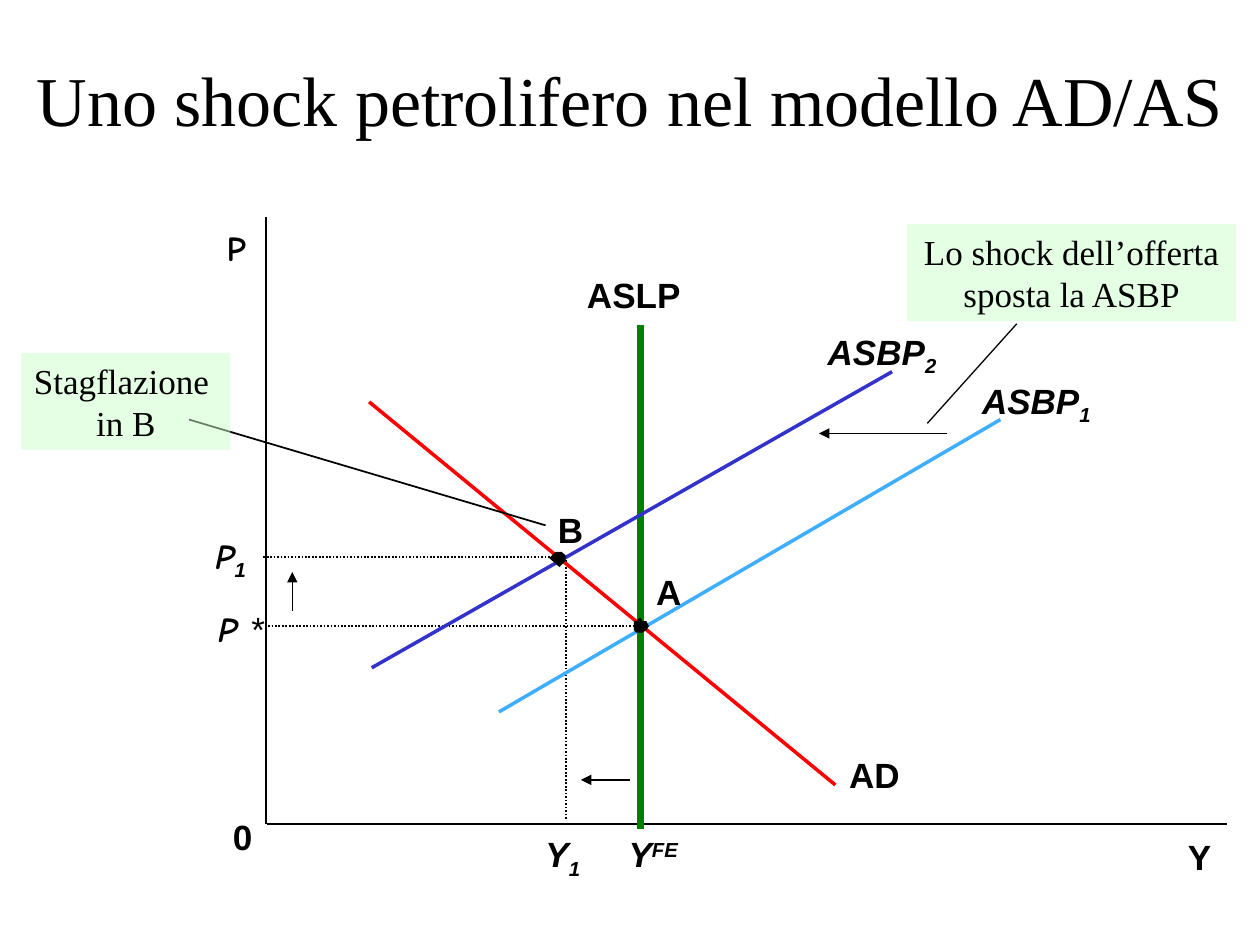
from lxml.etree import SubElement
from pptx import Presentation
from pptx.dml.color import RGBColor
from pptx.enum.dml import MSO_LINE
from pptx.enum.shapes import MSO_CONNECTOR, MSO_SHAPE
from pptx.enum.text import MSO_ANCHOR, MSO_AUTO_SIZE, PP_ALIGN
from pptx.oxml.ns import qn
from pptx.util import Inches, Pt

BLACK = "000000"
BOLD, ITALIC, PLAIN = (True, False), (True, True), (False, False)
SUBSCRIPT, SUPERSCRIPT = -25, 30


def color(value):
    """Turn a hex string into a colour."""
    return RGBColor.from_string(value)


def style_span(span, size=20, font="Arial", style=BOLD, baseline=0):
    """Format one run of text."""
    span.font.size = Pt(size)
    span.font.name = font
    span.font.bold, span.font.italic = style
    span.font.color.rgb = color(BLACK)
    if baseline:
        span._r.get_or_add_rPr().set("baseline", str(baseline * 1000))


def add_label(page, box, parts, align=PP_ALIGN.LEFT, wrap=False, spacing=None):
    """Add a one-line label made of (text, format) parts."""
    label = page.shapes.add_textbox(*map(Inches, box))
    frame = label.text_frame
    frame.word_wrap = wrap
    frame.auto_size = MSO_AUTO_SIZE.SHAPE_TO_FIT_TEXT
    para = frame.paragraphs[0]
    para.alignment = align
    para.line_spacing = spacing
    for text, look in parts:
        span = para.add_run()
        span.text = text
        style_span(span, **look)


def style_line(line, stroke, width, dotted=False):
    """Set the colour, width and dash of a line."""
    line.color.rgb = color(stroke)
    line.width = Pt(width)
    if dotted:
        line.dash_style = MSO_LINE.ROUND_DOT


def add_line(page, start, end, stroke=BLACK, width=1, dotted=False, arrow=False):
    """Add a straight line, with an arrowhead at its end if wanted."""
    line = page.shapes.add_connector(
        MSO_CONNECTOR.STRAIGHT, *map(Inches, (*start, *end)))
    style_line(line.line, stroke, width, dotted)
    properties = line._element.spPr
    if arrow:
        SubElement(properties.find(qn("a:ln")), qn("a:tailEnd"), type="triangle")
    SubElement(properties, qn("a:effectLst"))


def add_outline(page, points, closed):
    """Add a freeform through the given points."""
    corners = [(Inches(x), Inches(y)) for x, y in points]
    builder = page.shapes.build_freeform(*corners[0])
    builder.add_line_segments(corners[1:], close=closed)
    outline = builder.convert_to_shape()
    outline.shadow.inherit = False
    return outline


def add_title(page, box, text):
    """Add the slide title."""
    title = page.shapes.add_textbox(*map(Inches, box))
    frame = title.text_frame
    frame.word_wrap = True
    frame.vertical_anchor = MSO_ANCHOR.MIDDLE
    frame.text = text
    para = frame.paragraphs[0]
    para.alignment = PP_ALIGN.CENTER
    style_span(para.runs[0], 40, "Times New Roman", PLAIN)


def add_callout(page, box, lines):
    """Add a translucent green note."""
    note = page.shapes.add_shape(MSO_SHAPE.RECTANGLE, *map(Inches, box))
    note.shadow.inherit = False
    note.line.fill.background()
    note.fill.solid()
    note.fill.fore_color.rgb = color("CCFFCC")
    tint = note._element.spPr.find(qn("a:solidFill"))[0]
    SubElement(tint, qn("a:alpha"), val="50000")
    frame = note.text_frame
    frame.word_wrap = False
    frame.auto_size = MSO_AUTO_SIZE.SHAPE_TO_FIT_TEXT
    frame.text = "\n".join(lines)
    for para in frame.paragraphs:
        para.alignment = PP_ALIGN.CENTER
        style_span(para.runs[0], 20, "Times New Roman", PLAIN)


def add_graph(page, left, top):
    """Draw the axes, curves, guides, labels and equilibria."""
    def at(x, y):
        return left + x, top + y

    def label(x, y, width, *parts, **options):
        add_label(page, (*at(x, y), width, 0.43), parts, **options)

    def line(start, end, **options):
        add_line(page, at(*start), at(*end), **options)

    italic = {"style": ITALIC}
    lower = {"style": ITALIC, "baseline": SUBSCRIPT}
    upper = {"style": ITALIC, "baseline": SUPERSCRIPT}
    price = {"style": ITALIC, "font": "Comic Neue"}
    centered = {"align": PP_ALIGN.CENTER}

    line((1.11, 5.54), (1.11, 0.72))
    line((1.12, 5.54), (8.74, 5.54))
    guide = add_outline(
        page, [at(1.09, 3.42), at(3.49, 3.42), at(3.49, 5.5)], False)
    guide.fill.background()
    style_line(guide.line, BLACK, 1, True)
    line((1.1, 3.97), (4.12, 3.97), dotted=True)

    curves = [
        ((4.08, 1.58), (4.08, 5.58), "008000", 4),
        ((1.95, 4.3), (6.08, 1.95), "3333CC", 2),
        ((2.96, 4.65), (6.94, 2.33), "40AEFF", 2),
        ((5.63, 5.23), (1.93, 2.19), "FF0000", 2),
    ]
    for start, end, stroke, width in curves:
        line(start, end, stroke=stroke, width=width)

    point_a = [(4.08, 4.02), (4.1, 4.02), (4.13, 4), (4.15, 3.97), (4.13, 3.93),
               (4.1, 3.93), (4.08, 3.9), (4.05, 3.93), (4.03, 3.93), (4.03, 4),
               (4.05, 4.02)]
    point_b = [(3.44, 3.5), (3.49, 3.45), (3.49, 3.41), (3.46, 3.38),
               (3.41, 3.38), (3.36, 3.43)]
    for points in (point_a, point_b):
        dot = add_outline(page, [at(*point) for point in points], True)
        dot.fill.solid()
        dot.fill.fore_color.rgb = color(BLACK)
        dot.line.fill.background()

    plain_labels = [
        (8.33, 5.58, 0.38, "Y"), (0.75, 5.42, 0.35, "0"),
        (5.64, 4.93, 0.6, "AD"), (4.11, 3.48, 0.4, "A"), (3.33, 2.99, 0.4, "B"),
    ]
    for x, y, width, text in plain_labels:
        label(x, y, width, (text, {}))
    label(0.7, 0.75, 0.35, ("P", {"font": "Comic Neue"}))
    label(3.25, 1.17, 1.56, ("ASLP", {}), wrap=True, spacing=0.85, **centered)
    label(6.2, 1.96, 2.05, ("ASBP", italic), ("1", lower), wrap=True, **centered)
    label(5.46, 1.57, 1.08, ("ASBP", italic), ("2", lower), **centered)
    label(3.89, 5.56, 0.61, ("Y", italic), ("FE", upper))
    label(3.23, 5.56, 0.48, ("Y", italic), ("1", lower))
    label(0.61, 3.19, 0.56, ("P", price), ("1", lower), wrap=True)
    label(0.57, 3.77, 0.68, ("P ", price), ("*", {"style": (False, True)}),
          wrap=True, **centered)

    shifts = [((4, 5.19), (3.61, 5.19)), ((1.32, 3.85), (1.32, 3.54)),
              ((6.52, 2.44), (5.5, 2.44))]
    for start, end in shifts:
        line(start, end, width=0.75, arrow=True)


def main():
    """Build and save the slide."""
    deck = Presentation()
    deck.slide_width, deck.slide_height = Inches(10), Inches(7.5)
    page = deck.slides.add_slide(deck.slide_layouts[6])
    add_graph(page, 1, 1)
    add_line(page, (4.33, 4.17), (1.5, 3.33))
    add_callout(page, (0.17, 2.8, 1.66, 0.77), ["Stagflazione ", "in B"])
    add_title(page, (0, 0.36, 10, 0.84), "Uno shock petrolifero nel modello AD/AS")
    add_callout(page, (7.2, 1.78, 2.61, 0.77),
                ["Lo shock dell’offerta ", "sposta la ASBP"])
    add_line(page, (8.07, 2.57), (7.36, 3.36), width=0.75)
    deck.save("out.pptx")


if __name__ == "__main__":
    main()
